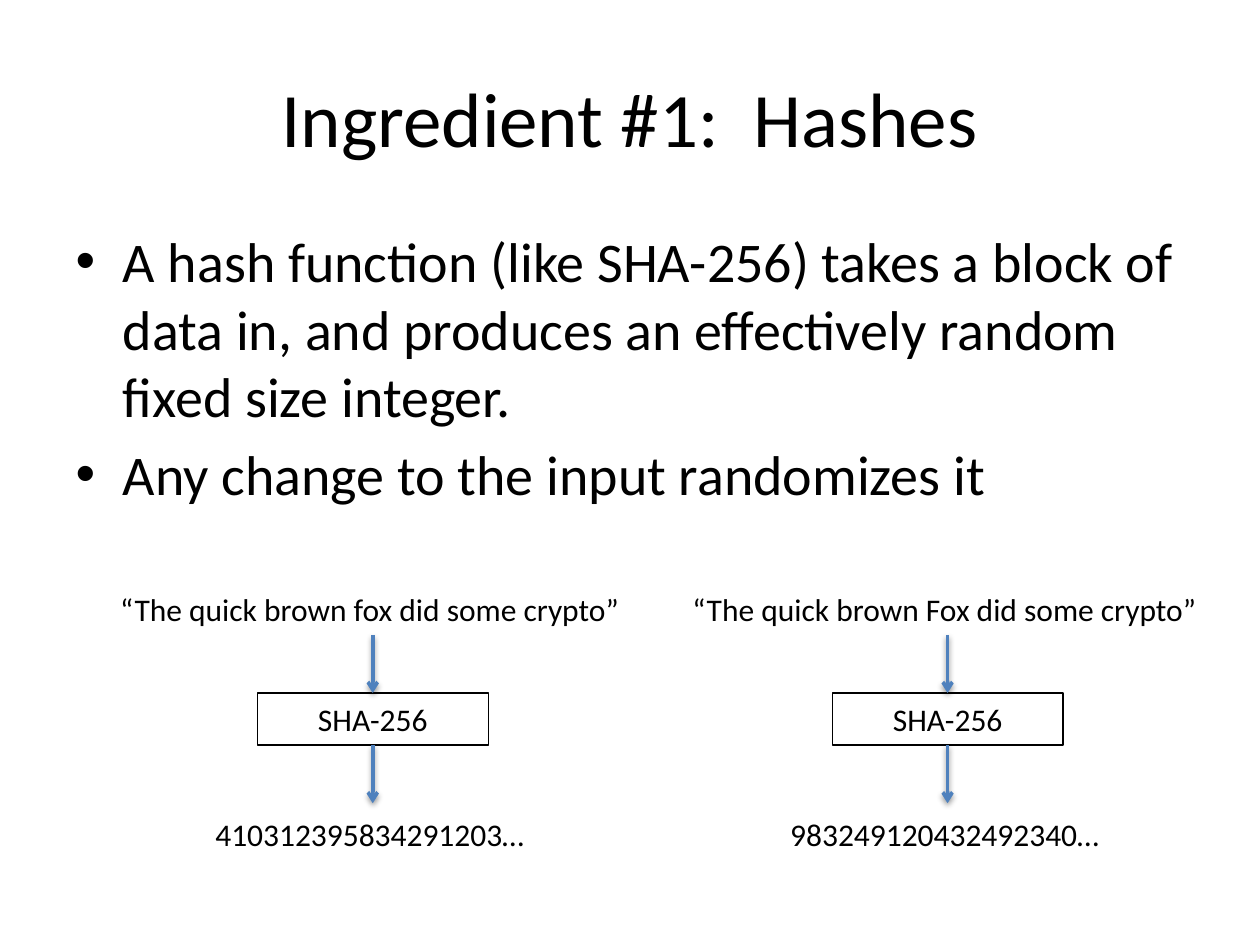
from dataclasses import dataclass

from lxml import etree
from pptx import Presentation
from pptx.dml.color import RGBColor
from pptx.enum.shapes import MSO_CONNECTOR, MSO_SHAPE
from pptx.enum.text import MSO_ANCHOR, MSO_AUTO_SIZE, PP_ALIGN
from pptx.oxml import parse_xml
from pptx.oxml.ns import qn
from pptx.util import Pt

STRAIGHT = MSO_CONNECTOR.STRAIGHT
RECTANGLE = MSO_SHAPE.RECTANGLE
MIDDLE = MSO_ANCHOR.MIDDLE
TOP = MSO_ANCHOR.TOP
FIT_SHAPE = MSO_AUTO_SIZE.SHAPE_TO_FIT_TEXT
CENTER = PP_ALIGN.CENTER
LEFT = PP_ALIGN.LEFT
TOP_SITE, BOTTOM_SITE = 0, 2


@dataclass(frozen=True)
class Theme:
    font: str = "Calibri"
    ink: RGBColor = RGBColor(0, 0, 0)
    paper: RGBColor = RGBColor(255, 255, 255)
    arrow: RGBColor = RGBColor(0x4F, 0x81, 0xBD)
    title_size: int = 44
    body_size: int = 32
    label_size: int = 18


THEME = Theme()
TITLE = "Ingredient #1:  Hashes"
POINTS = [
    "A hash function (like SHA-256) takes a block of data in, and produces "
    "an effectively random fixed size integer.",
    "Any change to the input randomizes it",
]
EXAMPLES = [
    (213, "“The quick brown fox did some crypto”", 303,
     "410312395834291203…", 194),
    (541.5, "“The quick brown Fox did some crypto”", 306,
     "983249120432492340…", 194),
]
INPUT_TOP = 333.5
HASH_TOP, HASH_WIDTH, HASH_HEIGHT = 396, 132, 29.75
DIGEST_TOP = 462
LABEL_HEIGHT = 29
ARROW_LENGTH = 33.25
SHADOW = (
    '<a:effectLst xmlns:a="http://schemas.openxmlformats.org/drawingml/2006/main">'
    '<a:outerShdw blurRad="40000" dist="20000" dir="5400000" rotWithShape="0">'
    '<a:srgbClr val="000000"><a:alpha val="38000"/></a:srgbClr>'
    '</a:outerShdw></a:effectLst>'
)


def format_text(frame, size, alignment):
    for paragraph in frame.paragraphs:
        paragraph.alignment = alignment
        for run in paragraph.runs:
            run.font.name = THEME.font
            run.font.size = Pt(size)
            run.font.color.rgb = THEME.ink


def place(placeholder, left, top, width, height):
    placeholder.left, placeholder.top = Pt(left), Pt(top)
    placeholder.width, placeholder.height = Pt(width), Pt(height)


def fill_title(slide):
    title = slide.shapes.title
    place(title, 36, 21.6, 648, 90)
    title.text_frame.text = TITLE
    title.text_frame.vertical_anchor = MIDDLE
    format_text(title.text_frame, THEME.title_size, CENTER)


def fill_points(slide):
    body = slide.placeholders[1]
    place(body, 36, 126, 648, 356.4)
    body.text_frame.text = "\n".join(POINTS)
    body.text_frame.vertical_anchor = TOP
    format_text(body.text_frame, THEME.body_size, LEFT)


def add_label(slide, text, center, top, width):
    label = slide.shapes.add_textbox(
        Pt(center - width / 2), Pt(top), Pt(width), Pt(LABEL_HEIGHT))
    label.text_frame.text = text
    label.text_frame.word_wrap = False
    label.text_frame.auto_size = FIT_SHAPE
    format_text(label.text_frame, THEME.label_size, LEFT)


def add_hash_box(slide, center):
    box = slide.shapes.add_shape(
        RECTANGLE, Pt(center - HASH_WIDTH / 2), Pt(HASH_TOP),
        Pt(HASH_WIDTH), Pt(HASH_HEIGHT))
    box.shadow.inherit = False
    box.fill.solid()
    box.fill.fore_color.rgb = THEME.paper
    box.line.color.rgb = THEME.ink
    box.line.width = Pt(0.75)
    box.text_frame.text = "SHA-256"
    box.text_frame.vertical_anchor = MIDDLE
    format_text(box.text_frame, THEME.label_size, CENTER)
    return box


def add_arrow(slide, center, top):
    arrow = slide.shapes.add_connector(
        STRAIGHT, Pt(center), Pt(top), Pt(center), Pt(top + ARROW_LENGTH))
    arrow.line.color.rgb = THEME.arrow
    arrow.line.width = Pt(2)
    properties = arrow._element.spPr
    etree.SubElement(properties.get_or_add_ln(), qn("a:tailEnd"), type="arrow")
    properties.append(parse_xml(SHADOW))
    return arrow


def add_example(slide, center, message, message_width, digest, digest_width):
    hash_box = add_hash_box(slide, center)
    add_label(slide, message, center, INPUT_TOP, message_width)
    add_label(slide, digest, center, DIGEST_TOP, digest_width)
    arrow_in = add_arrow(slide, center, HASH_TOP - ARROW_LENGTH)
    arrow_in.end_connect(hash_box, TOP_SITE)
    arrow_out = add_arrow(slide, center, HASH_TOP + HASH_HEIGHT)
    arrow_out.begin_connect(hash_box, BOTTOM_SITE)


def main():
    deck = Presentation()
    deck.slide_width, deck.slide_height = Pt(720), Pt(540)
    slide = deck.slides.add_slide(deck.slide_layouts[1])
    fill_title(slide)
    fill_points(slide)
    for example in EXAMPLES:
        add_example(slide, *example)
    deck.save("out.pptx")


if __name__ == "__main__":
    main()
